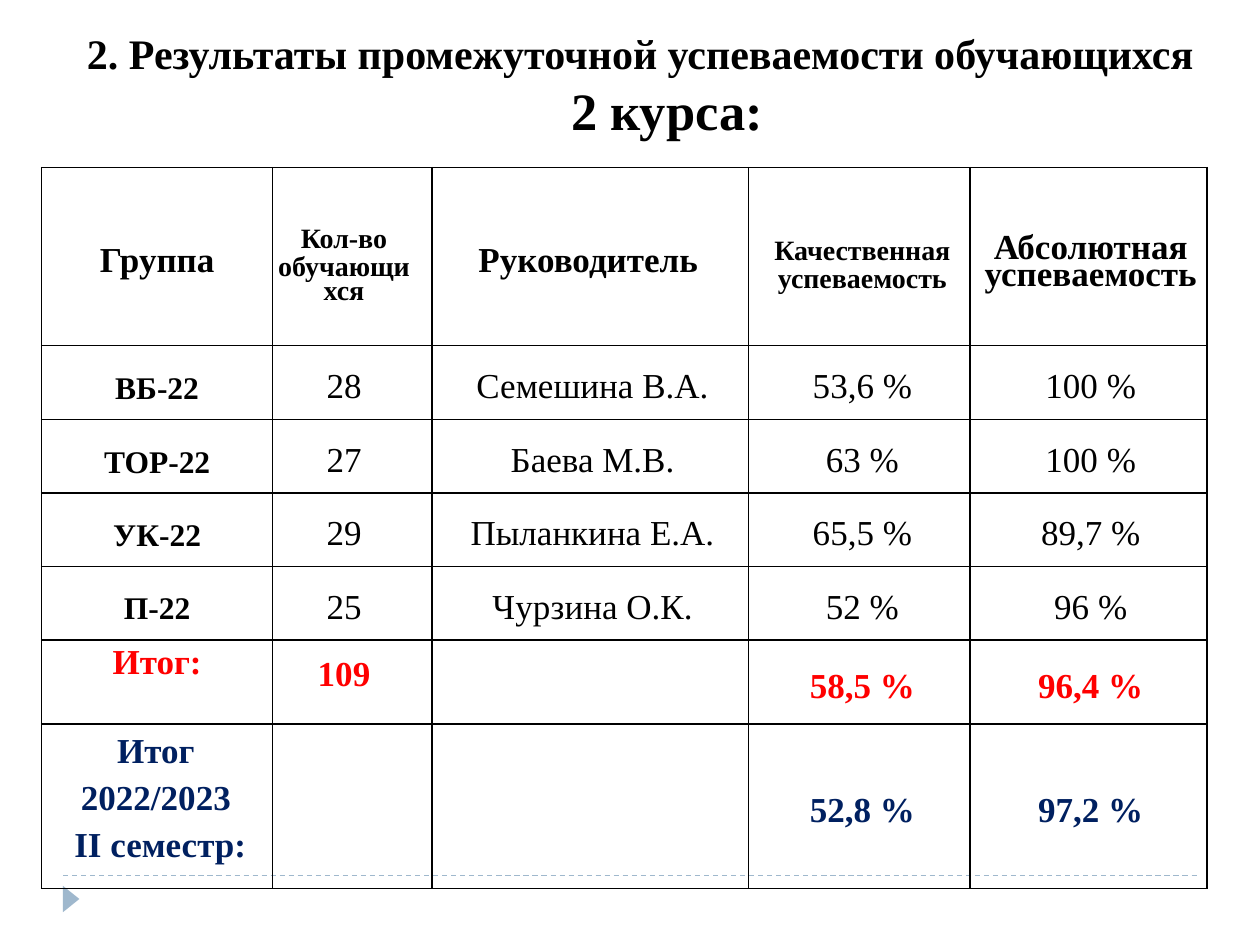
from dataclasses import dataclass
from lxml.etree import SubElement as Sub
from pptx import Presentation
from pptx.dml.color import RGBColor as RGB
from pptx.enum.dml import MSO_LINE as Dash
from pptx.enum.shapes import MSO_CONNECTOR as Conn, MSO_SHAPE as Shape
from pptx.enum.text import MSO_ANCHOR as Anchor, PP_ALIGN as Align
from pptx.oxml import parse_xml
from pptx.oxml.ns import nsdecls, qn
from pptx.util import Pt


@dataclass(frozen=True)
class Theme:
    font: str = "Times New Roman"
    ink: str = "000000"
    total: str = "FF0000"
    past: str = "002060"
    trim: str = "9FB8CD"
    small: int = 16
    group: int = 18
    body: int = 20
    head: int = 24
    lead: int = 30


T = Theme()
COLS = [132, 91.2, 180.7, 126.7, 135.4]
ROWS = [101.5, 42.5, 42, 42, 42, 48, 94]
LEFT = [5, 2.2, 8.6, 8.6, 6.5]
RIGHT = [5, 11.8, 6, 5, 4]
HEADS = [
    (["Группа"], T.body),
    (["Кол-во", "обучающихся"], T.small),
    (["Руководитель "], T.body),
    (["Качественная", "успеваемость"], T.small),
    (["Абсолютная", "успеваемость"], T.body),
]
DATA = [
    ("ВБ-22", "28", "Семешина В.А.", "53,6 %", "100 %"),
    ("ТОР-22", "27", "Баева М.В.", "63 %", "100 %"),
    ("УК-22", "29", "Пыланкина Е.А.", "65,5 %", "89,7 %"),
    ("П-22", "25", "Чурзина О.К.", "52 %", "96 %"),
]


def add_run(para, text, size, color=T.ink, bold=True):
    run = para.add_run()
    run.text = text
    font = run.font
    font.name, font.size, font.bold = T.font, Pt(size), bold
    font.color.rgb = RGB.from_string(color)


def fill_cell(cell, lines, size=T.body, color=T.ink, bold=True,
              pitch=13.4, top=None, gap=2):
    cell.margin_top = Pt(pitch if top is None else top)
    frame = cell.text_frame
    for i, line in enumerate(lines):
        para = frame.add_paragraph() if i else frame.paragraphs[0]
        para.alignment = Align.CENTER
        para.line_spacing = Pt(pitch)
        para.space_before = Pt(gap if i else 0)
        add_run(para, line, size, color, bold)


def style_cell(cell, col):
    cell.margin_left, cell.margin_right = Pt(LEFT[col]), Pt(RIGHT[col])
    cell.margin_top = cell.margin_bottom = 0
    cell.vertical_anchor = Anchor.MIDDLE
    cell.fill.background()
    props = cell._tc.get_or_add_tcPr()
    for i, side in enumerate("LRTB"):
        props.insert(i, parse_xml(
            f'<a:ln{side} {nsdecls("a")} w="{Pt(1)}"><a:solidFill>'
            f'<a:srgbClr val="{T.ink}"/></a:solidFill></a:ln{side}>'))


def add_grid(slide):
    grid = slide.shapes.add_table(
        len(ROWS), len(COLS), Pt(23.8), Pt(95.8),
        Pt(sum(COLS)), Pt(sum(ROWS))).table
    grid.first_row = grid.horz_banding = False
    for col, width in zip(grid.columns, COLS):
        col.width = Pt(width)
    for row, height in zip(grid.rows, ROWS):
        row.height = Pt(height)
        for i, cell in enumerate(row.cells):
            style_cell(cell, i)
    return grid


def fill_grid(grid):
    for i, (lines, size) in enumerate(HEADS):
        fill_cell(grid.cell(0, i), lines, size, pitch=13.7)
    for i, (name, *rest) in enumerate(DATA, 1):
        fill_cell(grid.cell(i, 0), [name], T.group)
        for j, text in enumerate(rest, 1):
            fill_cell(grid.cell(i, j), [text], bold=False)

    sums = grid.cell(5, 0)
    fill_cell(sums, ["Итог:"], color=T.total, top=0)
    sums.margin_bottom = Pt(14)
    fill_cell(grid.cell(5, 1), ["109"], color=T.total, pitch=13.7, top=0)
    past = grid.cell(6, 0)
    fill_cell(past, ["Итог ", "2022/2023 ", "II семестр:"],
              color=T.past, top=0, gap=13.6)
    past.margin_left = Pt(8.6)
    rates = [(5, T.total, "58,5 %", "96,4 %"), (6, T.past, "52,8 %", "97,2 %")]
    for row, color, *pair in rates:
        for col, text in enumerate(pair, 3):
            fill_cell(grid.cell(row, col), [text], color=color, pitch=13.7)


def set_title(slide):
    title = slide.shapes.title
    title.left, title.top = Pt(0), Pt(12.2)
    title.width, title.height = Pt(720), Pt(94.3)
    frame = title.text_frame
    frame.word_wrap = True
    frame.vertical_anchor = Anchor.MIDDLE
    frame.margin_bottom = Pt(25.5)
    lines = [
        ("2. Результаты промежуточной успеваемости обучающихся",
         T.head, Align.LEFT),
        ("2 курса:", T.lead, Align.CENTER),
    ]
    for i, (text, size, align) in enumerate(lines):
        para = frame.add_paragraph() if i else frame.paragraphs[0]
        para.alignment = align
        para._p.get_or_add_pPr().set("indent", str(Pt(42.5)))
        add_run(para, text, size)


def add_trim(slide):
    rule = slide.shapes.add_connector(
        Conn.STRAIGHT, Pt(36), Pt(500.4), Pt(684), Pt(500.4))
    rule.line.color.rgb = RGB.from_string(T.trim)
    rule.line.width = Pt(0.75)
    rule.line.dash_style = Dash.DASH
    Sub(rule._element.spPr, qn("a:effectLst"))
    mark = slide.shapes.add_shape(
        Shape.ISOSCELES_TRIANGLE, Pt(33.1), Pt(509), Pt(15.1), Pt(9.4))
    mark.rotation = 90
    mark.shadow.inherit = False
    mark.fill.solid()
    mark.fill.fore_color.rgb = RGB.from_string(T.trim)
    mark.line.fill.background()


def main():
    deck = Presentation()
    deck.slide_width, deck.slide_height = Pt(720), Pt(540)
    slide = deck.slides.add_slide(deck.slide_layouts[5])
    set_title(slide)
    add_trim(slide)
    fill_grid(add_grid(slide))
    deck.save("out.pptx")


if __name__ == "__main__":
    main()
